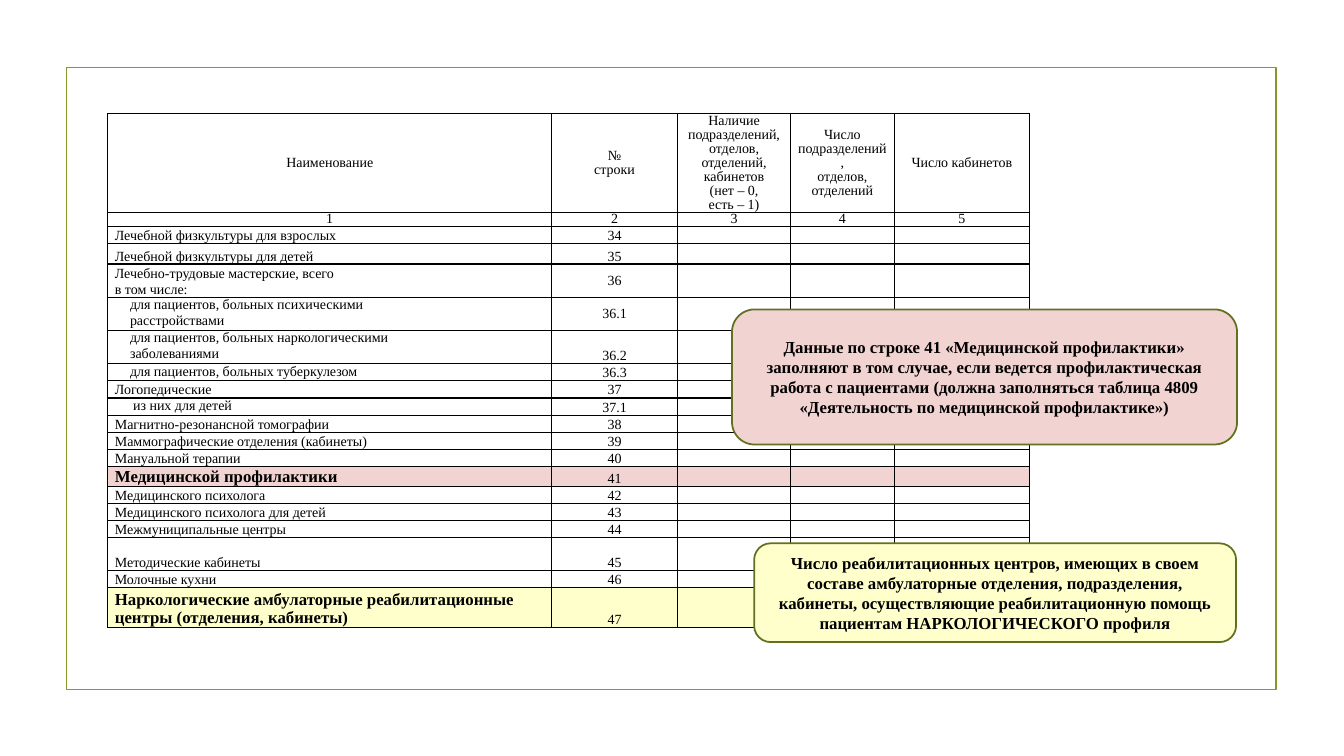
import pptx
import pptx.oxml
import pptx.util
import pptx.dml.color
import pptx.enum.shapes
import pptx.enum.text
import pptx.oxml.ns

Inches, Pt = pptx.util.Inches, pptx.util.Pt
Align, Anchor = pptx.enum.text.PP_ALIGN, pptx.enum.text.MSO_ANCHOR
Shape = pptx.enum.shapes.MSO_SHAPE

FONT = "Times New Roman"
COLORS = {
    "frame": "83992A",
    "outline": "61711F",
    "pink": "F1D4D2",
    "yellow": "FFFFCC",
    "black": "000000",
}
COLUMN_WIDTHS = [4.4, 1.25, 1.12, 1.03, 1.34]
HEADERS = [
    "Наименование",
    "№\vстроки",
    "Наличие подразделений,\vотделов, отделений, кабинетов\v(нет – 0,\vесть – 1)",
    "Число\vподразделений,\vотделов,\vотделений",
    "Число кабинетов",
]
HEADER_HEIGHTS = [0.98, 0.14]
LINE_HEIGHT = 0.17
# label, row number, height, indent
ROWS = [
    ("Лечебной физкультуры для взрослых", "34", LINE_HEIGHT, 0),
    ("Лечебной физкультуры для детей", "35", 0.2, 0),
    ("Лечебно-трудовые мастерские, всего\nв том числе:", "36", 0.33, 0),
    ("для пациентов, больных психическими\vрасстройствами", "36.1", 0.33, 0.15),
    ("для пациентов, больных наркологическими\vзаболеваниями", "36.2", 0.33, 0.15),
    ("для пациентов, больных туберкулезом", "36.3", LINE_HEIGHT, 0.15),
    ("Логопедические", "37", LINE_HEIGHT, 0),
    ("из них для детей", "37.1", LINE_HEIGHT, 0.18),
    ("Магнитно-резонансной томографии", "38", LINE_HEIGHT, 0),
    ("Маммографические отделения (кабинеты)", "39", LINE_HEIGHT, 0),
    ("Мануальной терапии", "40", LINE_HEIGHT, 0),
    ("Медицинской профилактики", "41", 0.2, 0),
    ("Медицинского психолога", "42", LINE_HEIGHT, 0),
    ("Медицинского психолога для детей", "43", LINE_HEIGHT, 0),
    ("Межмуниципальные центры", "44", LINE_HEIGHT, 0),
    ("Методические кабинеты", "45", 0.32, 0),
    ("Молочные кухни", "46", LINE_HEIGHT, 0),
    ("Наркологические амбулаторные реабилитационные центры (отделения, кабинеты)",
     "47", 0.4, 0),
]
HIGHLIGHTS = {"41": "pink", "47": "yellow"}
CENTERED_NUMBERS = {"36", "36.1"}
CALLOUTS = [
    ("Данные по строке 41 «Медицинской профилактики» заполняют в том случае, "
     "если ведется профилактическая работа с пациентами (должна заполняться "
     "таблица 4809 «Деятельность по медицинской профилактике»)",
     "pink", (7.26, 3.07, 5.01, 1.34)),
    ("Число реабилитационных центров, имеющих в своем составе амбулаторные "
     "отделения, подразделения, кабинеты, осуществляющие реабилитационную "
     "помощь пациентам НАРКОЛОГИЧЕСКОГО профиля",
     "yellow", (7.48, 5.39, 4.78, 0.98)),
]


def color(name):
    return pptx.dml.color.RGBColor.from_string(COLORS[name])


def style_text(frame, size, bold, align):
    for para in frame.paragraphs:
        para.alignment = align
        para.font.name = FONT
        para.font.size = Pt(size)
        para.font.bold = bold
        para.font.color.rgb = color("black")


def add_borders(cell):
    properties = cell._tc.get_or_add_tcPr()
    for position, side in enumerate(("lnL", "lnR", "lnT", "lnB")):
        border = pptx.oxml.parse_xml(
            f'<a:{side} xmlns:a="http://schemas.openxmlformats.org/drawingml/2006/main" '
            f'w="{Pt(1)}"><a:solidFill><a:srgbClr val="{COLORS["black"]}"/>'
            f'</a:solidFill></a:{side}>')
        properties.insert(position, border)


def fill_cell(cell, text, fill=None, size=10, bold=False,
              align=Align.CENTER, anchor=Anchor.BOTTOM):
    cell.margin_left = cell.margin_right = Inches(0.07)
    cell.margin_top = cell.margin_bottom = 0
    cell.vertical_anchor = anchor
    cell.text = text
    style_text(cell.text_frame, size, bold, align)
    if not text:
        # An empty cell takes its height from the end-of-paragraph size
        para = cell.text_frame.paragraphs[0]._p
        para.append(para.makeelement(
            pptx.oxml.ns.qn("a:endParaRPr"), {"sz": str(size * 100)}))
    if fill:
        cell.fill.solid()
        cell.fill.fore_color.rgb = color(fill)
    else:
        cell.fill.background()
    add_borders(cell)


def add_box(page, preset, place, line, fill=None):
    box = page.shapes.add_shape(preset, *map(Inches, place))
    box.shadow.inherit = False
    box.line.color.rgb = color(line)
    box.line.width = Pt(1.25)
    if fill:
        box.fill.solid()
        box.fill.fore_color.rgb = color(fill)
    else:
        box.fill.background()
    return box


def add_room_table(page):
    heights = HEADER_HEIGHTS + [row[2] for row in ROWS]
    table = page.shapes.add_table(
        len(heights), len(COLUMN_WIDTHS), Inches(1.07), Inches(1.13),
        Inches(sum(COLUMN_WIDTHS)), Inches(sum(heights))).table
    table.first_row = table.horz_banding = False
    for column, width in zip(table.columns, COLUMN_WIDTHS):
        column.width = Inches(width)
    for row, height in zip(table.rows, heights):
        row.height = Inches(height)

    for index, header in enumerate(HEADERS):
        fill_cell(table.cell(0, index), header, anchor=Anchor.MIDDLE)
        fill_cell(table.cell(1, index), str(index + 1))
        for row in range(len(HEADER_HEIGHTS)):
            table.cell(row, index).text_frame.paragraphs[0].line_spacing = Pt(10)

    for row, (label, number, _, indent) in enumerate(ROWS, start=len(HEADER_HEIGHTS)):
        fill = HIGHLIGHTS.get(number)
        label_cell = table.cell(row, 0)
        fill_cell(label_cell, label, fill, 12 if fill else 10, bool(fill), Align.LEFT,
                  Anchor.TOP if indent else Anchor.BOTTOM)
        label_cell.margin_left = Inches(0.07 + indent)
        fill_cell(table.cell(row, 1), number, fill,
                  anchor=Anchor.MIDDLE if number in CENTERED_NUMBERS else Anchor.BOTTOM)
        for column in range(2, len(COLUMN_WIDTHS)):
            fill_cell(table.cell(row, column), "", fill)


def main():
    deck = pptx.Presentation()
    deck.slide_width, deck.slide_height = Inches(13.33), Inches(7.5)
    page = deck.slides.add_slide(deck.slide_layouts[6])
    add_box(page, Shape.RECTANGLE, (0.66, 0.67, 12, 6.17), "frame")
    add_room_table(page)
    for text, fill, place in CALLOUTS:
        box = add_box(page, Shape.ROUNDED_RECTANGLE, place, "outline", fill)
        box.text_frame.word_wrap = True
        box.text_frame.vertical_anchor = Anchor.MIDDLE
        box.text_frame.text = text
        style_text(box.text_frame, 12, True, Align.CENTER)
    deck.save("out.pptx")


if __name__ == "__main__":
    main()
